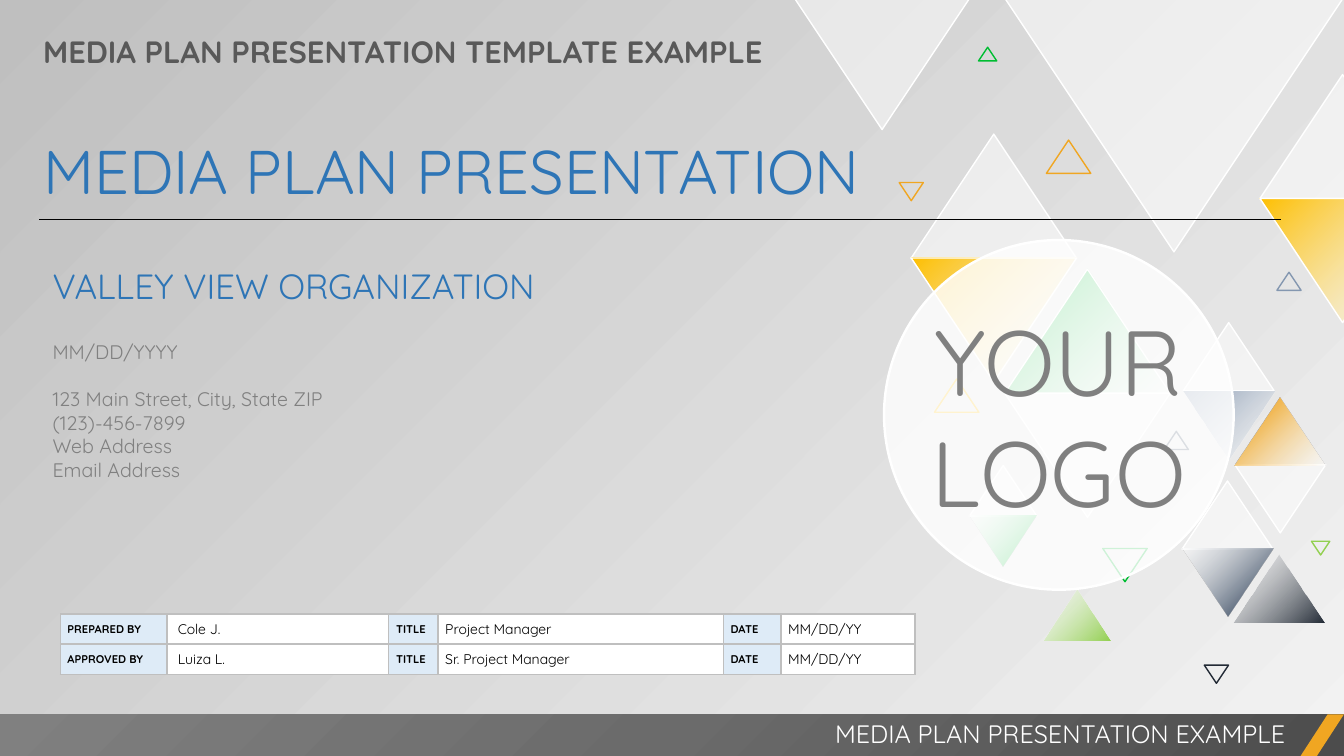
"""Build the cover slide of a media plan presentation."""
from dataclasses import dataclass

from pptx import Presentation
from pptx import oxml
from pptx import util as u
from pptx.dml.color import RGBColor
from pptx.enum import shapes, text
from pptx.oxml import ns


@dataclass(frozen=True)
class Theme:
    font: str = "Quicksand"
    white: str = "FFFFFF"
    black: str = "000000"
    blue: str = "2E75B6"
    pale_blue: str = "DEEBF7"
    heading: str = "595959"
    grey: str = "808080"
    border: str = "BFBFBF"
    light: str = "F2F2F2"
    yellow: str = "FFC000"
    orange: str = "F0A622"
    green: str = "00BD32"
    lime: str = "92D050"
    navy: str = "222A35"
    slate: str = "44546A"
    steel: str = "8497B0"
    footer_dark: str = "4C4C4C"
    footer_middle: str = "6B6B6B"
    logo_size: float = 66
    title_size: float = 44
    organization_size: float = 25
    header_size: float = 22
    footer_size: float = 18
    detail_size: float = 14
    value_size: float = 10
    label_size: float = 8


THEME = Theme()
DIAGONAL = '<a:lin {} ang="13500000" scaled="0"/>'
CORNER = '<a:path {} path="circle"><a:fillToRect l="100000" t="100000"/></a:path>'

GLASS_TRIANGLES = [
    (22.96, 3.38, 4.17, False), (25.32, 9.91, 4.17, True),
    (25.32, -0.05, 8.53, True), (29.79, 12.12, 2.29, False),
    (29.82, 8.13, 2.29, False), (31.12, 11.71, 2.29, True),
    (24.43, 11.73, 1.7, False), (31.75, 1.88, 4.17, False),
    (20.02, -0.05, 4.42, True),
]
FADED_TRIANGLES = [
    (22.96, 6.5, 4.17, True, THEME.yellow, "out", THEME.white),
    (25.32, 6.78, 4.17, False, THEME.green, "in", THEME.white),
    (31.09, 13.97, 2.29, False, THEME.navy, "out", None),
    (29.79, 13.82, 2.29, True, THEME.slate, "in", None),
    (29.82, 9.86, 2.29, True, THEME.steel, "out", None),
    (31.12, 10.01, 2.29, False, THEME.orange, "in", None),
    (26.29, 14.86, 1.7, False, THEME.lime, "out", None),
    (24.43, 13, 1.7, True, THEME.green, "in", None),
    (31.75, 5, 4.17, True, THEME.yellow, "out", THEME.white),
]
OUTLINE_TRIANGLES = [
    (27.79, 13.82, 1.12, True, THEME.green),
    (23.55, 9.55, 1.12, False, THEME.yellow),
    (29.34, 10.87, 0.61, False, THEME.slate),
    (30.35, 16.76, 0.61, True, THEME.navy),
    (22.66, 4.6, 0.61, True, THEME.orange),
    (32.18, 6.86, 0.61, False, THEME.steel),
    (24.66, 1.19, 0.46, False, THEME.green),
    (33.05, 13.64, 0.46, True, THEME.lime),
    (26.37, 3.53, 1.12, False, THEME.orange),
]
DETAILS = [
    ("VALLEY VIEW ORGANIZATION", THEME.organization_size, THEME.blue, 0),
    ("MM/DD/YYYY", THEME.detail_size, THEME.grey, 24),
    ("123 Main Street, City, State ZIP", THEME.detail_size, THEME.grey, 17),
    ("(123)-456-7899", THEME.detail_size, THEME.grey, 0),
    ("Web Address", THEME.detail_size, THEME.grey, 0),
    ("Email Address", THEME.detail_size, THEME.grey, 0),
]
SIGN_OFF = [
    ("PREPARED BY", "Cole J.", "TITLE", "Project Manager", "DATE", "MM/DD/YY"),
    ("APPROVED BY", "Luiza L.", "TITLE", "Sr. Project Manager", "DATE", "MM/DD/YY"),
]
SIGN_OFF_WIDTHS = [2.69, 5.59, 1.24, 7.19, 1.45, 3.38]


def element(markup):
    return oxml.parse_xml(markup.format(ns.nsdecls("a")))


def place(shape, box):
    shape.left, shape.top, shape.width, shape.height = map(u.Cm, box)


class SlideBuilder:
    """Draw styled elements on the current slide."""

    def __init__(self, slide, theme):
        self.slide, self.theme = slide, theme

    def style(self, paragraph, size, color, bold=False, align=text.PP_ALIGN.LEFT):
        paragraph.alignment = align
        for run in paragraph.runs:
            run.font.name, run.font.size, run.font.bold = self.theme.font, u.Pt(size), bold
            run.font.color.rgb = RGBColor.from_string(color)

    def gradient(self, fill, owner, stops, direction=DIAGONAL):
        fill.gradient()
        gradient = owner.find(".//" + ns.qn("a:gradFill"))
        for child in list(gradient):
            gradient.remove(child)
        markup = "".join(
            f'<a:gs pos="{position * 1000}"><a:srgbClr val="{color}">'
            f'<a:alpha val="{alpha * 1000}"/></a:srgbClr></a:gs>'
            for position, color, alpha in stops)
        gradient.append(element("<a:gsLst {}>" + markup + "</a:gsLst>"))
        gradient.append(element(direction))

    def background(self, stops):
        self.gradient(self.slide.background.fill, self.slide.element, stops)

    def shape(self, kind, box, fill=None, alpha=100, stops=None, direction=DIAGONAL,
              line=None, weight=1):
        shape = self.slide.shapes.add_shape(kind, *map(u.Cm, box))
        shape.shadow.inherit = False
        properties = shape.element.spPr
        if stops:
            self.gradient(shape.fill, properties, stops, direction)
        elif fill:
            shape.fill.solid()
            shape.fill.fore_color.rgb = RGBColor.from_string(fill)
            if alpha < 100:
                color = properties.find(".//" + ns.qn("a:srgbClr"))
                color.append(element(f'<a:alpha {{}} val="{alpha * 1000}"/>'))
        else:
            shape.fill.background()
        if line:
            shape.line.color.rgb = RGBColor.from_string(line)
            shape.line.width = u.Pt(weight)
        else:
            shape.line.fill.background()
        return shape

    def triangle(self, left, top, width, down, **look):
        shape = self.shape(shapes.MSO_SHAPE.ISOSCELES_TRIANGLE,
                           (left, top, width, width * 0.75), **look)
        shape.rotation = 180 if down else 0

    def faded_triangle(self, left, top, width, down, color, fade, line):
        clear = self.theme.white
        stops = {"out": [(0, color, 100), (100, clear, 50)],
                 "in": [(0, clear, 50), (82, color, 100)]}[fade]
        self.triangle(left, top, width, down, stops=stops, line=line)

    def text_box(self, box, words, size, color, **look):
        frame = self.slide.shapes.add_textbox(*map(u.Cm, box)).text_frame
        frame.word_wrap = True
        frame.text = words
        self.style(frame.paragraphs[0], size, color, **look)

    def title(self, box, words):
        title = self.slide.shapes.title
        place(title, box)
        frame = title.text_frame
        frame.text = words
        frame.vertical_anchor, frame.auto_size = text.MSO_ANCHOR.TOP, text.MSO_AUTO_SIZE.NONE
        self.style(frame.paragraphs[0], self.theme.title_size, self.theme.blue)

    def body(self, box, lines):
        body = self.slide.placeholders[1]
        place(body, box)
        frame = body.text_frame
        frame.text = "\n".join(line[0] for line in lines)
        frame.auto_size = text.MSO_AUTO_SIZE.NONE
        for paragraph, (_, size, color, gap) in zip(frame.paragraphs, lines):
            self.style(paragraph, size, color)
            paragraph.space_before = u.Pt(gap)
            properties = paragraph._p.get_or_add_pPr()
            properties.set("marL", "0")
            properties.set("indent", "0")
            properties.append(element("<a:buNone {}/>"))

    def rule(self, left, right, top):
        line = self.slide.shapes.add_connector(
            shapes.MSO_CONNECTOR.STRAIGHT, u.Cm(left), u.Cm(top), u.Cm(right), u.Cm(top))
        line.line.color.rgb = RGBColor.from_string(self.theme.black)
        line.line.width = u.Pt(0.5)
        line.element.spPr.append(element("<a:effectLst {}/>"))

    def logo(self, box, words):
        circle = self.shape(shapes.MSO_SHAPE.OVAL, box, fill=self.theme.white, alpha=81,
                            line=self.theme.white, weight=1.75)
        frame = circle.text_frame
        frame.text = words
        frame.word_wrap, frame.vertical_anchor = False, text.MSO_ANCHOR.MIDDLE
        frame.margin_left = frame.margin_right = frame.margin_top = frame.margin_bottom = 0
        for paragraph in frame.paragraphs:
            self.style(paragraph, self.theme.logo_size, self.theme.grey,
                       align=text.PP_ALIGN.CENTER)

    def table(self, left, top, widths, row_height, rows):
        table = self.slide.shapes.add_table(
            len(rows), len(widths), u.Cm(left), u.Cm(top),
            u.Cm(sum(widths)), u.Cm(row_height * len(rows))).table
        table.first_row = table.horz_banding = False
        for column, width in zip(table.columns, widths):
            column.width = u.Cm(width)
        for row, words in zip(table.rows, rows):
            row.height = u.Cm(row_height)
            for index, (cell, word) in enumerate(zip(row.cells, words)):
                self.cell(cell, word, index % 2 == 0, 0.27 if index == 1 else 0.18)

    def cell(self, cell, words, is_label, indent):
        theme = self.theme
        cell.text = words
        cell.vertical_anchor = text.MSO_ANCHOR.MIDDLE
        cell.margin_left, cell.margin_right = u.Cm(indent), u.Cm(0.18)
        cell.margin_top = cell.margin_bottom = 0
        cell.fill.solid()
        cell.fill.fore_color.rgb = RGBColor.from_string(
            theme.pale_blue if is_label else theme.white)
        paragraph = cell.text_frame.paragraphs[0]
        paragraph.line_spacing = 1.07
        self.style(paragraph, theme.label_size if is_label else theme.value_size,
                   theme.black, bold=is_label)
        for position, side in enumerate("LRTB"):
            cell._tc.get_or_add_tcPr().insert(position, element(
                f'<a:ln{side} {{}} w="12700"><a:solidFill><a:srgbClr val="{theme.border}"/>'
                f'</a:solidFill></a:ln{side}>'))


def main():
    presentation = Presentation()
    presentation.slide_width, presentation.slide_height = u.Cm(33.87), u.Cm(19.05)
    slide = presentation.slides.add_slide(presentation.slide_layouts[1])
    builder = SlideBuilder(slide, THEME)
    builder.background([(0, THEME.light, 40), (100, THEME.border, 100)])
    for triangle in GLASS_TRIANGLES:
        builder.triangle(*triangle, fill=THEME.white, alpha=50, line=THEME.white)
    for triangle in FADED_TRIANGLES:
        builder.faded_triangle(*triangle)
    for *triangle, color in OUTLINE_TRIANGLES:
        builder.triangle(*triangle, line=color)
    builder.text_box((0.84, 0.71, 22.99, 1.19), "MEDIA PLAN PRESENTATION TEMPLATE EXAMPLE",
                     THEME.header_size, THEME.heading, bold=True)
    builder.shape(shapes.MSO_SHAPE.RECTANGLE, (0, 18, 33.87, 1.06), direction=CORNER,
                  stops=[(0, THEME.footer_dark, 100), (50, THEME.footer_middle, 100),
                         (100, THEME.grey, 100)])
    accent = builder.shape(shapes.MSO_SHAPE.PARALLELOGRAM, (32.77, 18, 1.1, 1.06),
                           fill=THEME.orange)
    accent.adjustments[0] = 0.65
    builder.text_box((13.34, 17.98, 19.3, 1.02), "MEDIA PLAN PRESENTATION EXAMPLE",
                     THEME.footer_size, THEME.white, align=text.PP_ALIGN.RIGHT)
    builder.title((0.84, 3.23, 31.88, 2.13), "MEDIA PLAN PRESENTATION")
    builder.body((1.07, 6.53, 23.06, 5.77), DETAILS)
    builder.rule(0.99, 32.28, 5.54)
    builder.logo((22.28, 6.05, 8.81, 8.81), "YOUR\nLOGO")
    builder.table(1.52, 15.47, SIGN_OFF_WIDTHS, 0.76, SIGN_OFF)
    presentation.save("out.pptx")


if __name__ == "__main__":
    main()
